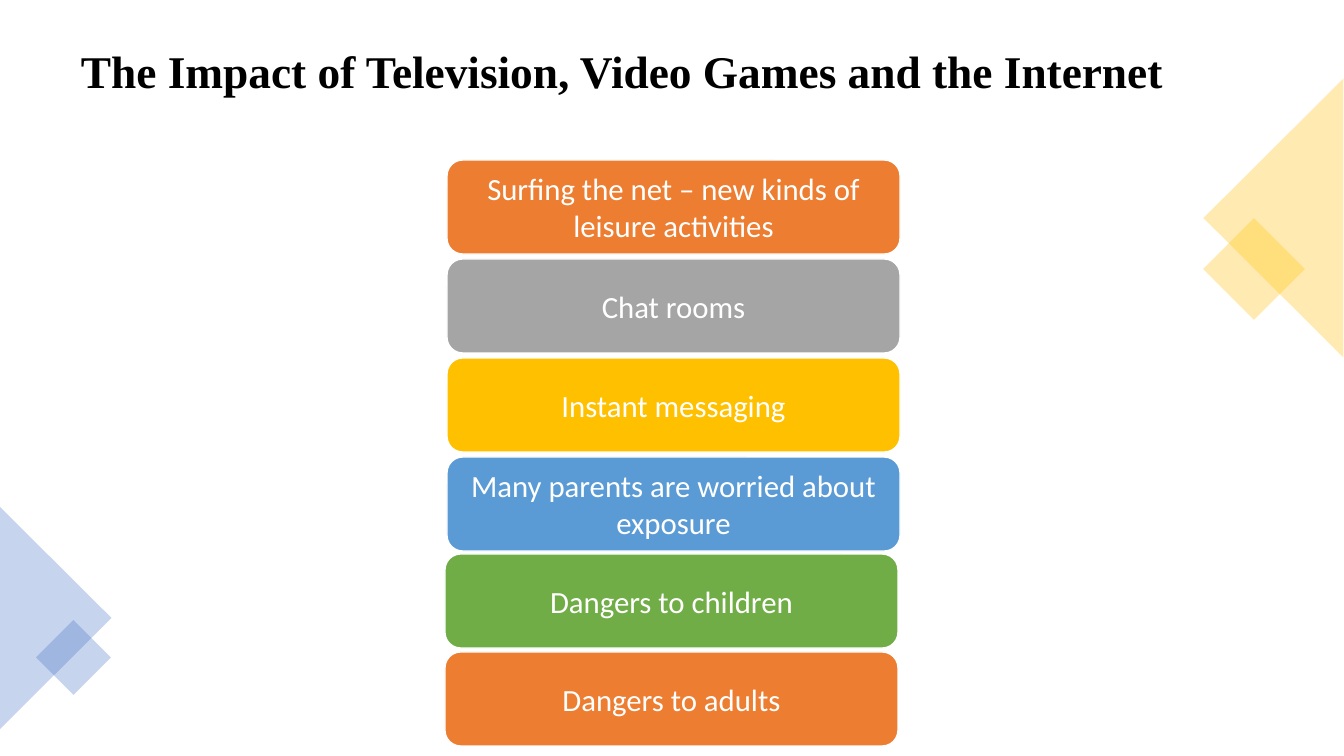
from lxml.etree import SubElement
from pptx import Presentation
from pptx.dml.color import RGBColor
from pptx.enum.shapes import MSO_SHAPE
from pptx.enum.text import MSO_ANCHOR, MSO_AUTO_SIZE, PP_ALIGN
from pptx.oxml.ns import qn
from pptx.util import Pt

EMU_PER_PX = 914400 / 100.8
COLORS = {
    "black": "000000",
    "white": "FFFFFF",
    "orange": "ED7D31",
    "gray": "A5A5A5",
    "gold": "FFC000",
    "sky": "5B9BD5",
    "green": "70AD47",
    "blue": "4472C4",
}
CARD_WIDTH, CARD_HEIGHT = 453, 94

# Each stack: left, top, distance between tops, cards
CARD_STACKS = [
    (447, 160, 99, [
        ("Surfing the net – new kinds of leisure activities", "orange"),
        ("Chat rooms", "gray"),
        ("Instant messaging", "gold"),
        ("Many parents are worried about exposure", "sky"),
    ]),
    (445, 554, 98, [
        ("Dangers to children", "green"),
        ("Dangers to adults", "orange"),
    ]),
]

# Corner decorations: preset, left, top, width, height, rotation, color
DECORATIONS = [
    (MSO_SHAPE.RECTANGLE, 1218, 233, 72, 72, 45, "gold"),
    (MSO_SHAPE.ISOSCELES_TRIANGLE, 1134, 148, 279, 140, 270, "gold"),
    (MSO_SHAPE.ISOSCELES_TRIANGLE, -56, 562, 223, 112, 90, "blue"),
    (MSO_SHAPE.RECTANGLE, 47, 631, 53, 53, 45, "blue"),
]


def px(length):
    return round(length * EMU_PER_PX)


def rgb(name):
    return RGBColor.from_string(COLORS[name])


def write_text(shape, text, *, size, font, color, bold=False,
               align=PP_ALIGN.LEFT, line_spacing=1.0, insets=(9, 5, 9, 5)):
    frame = shape.text_frame
    frame.word_wrap = True
    frame.auto_size = MSO_AUTO_SIZE.NONE
    frame.vertical_anchor = MSO_ANCHOR.MIDDLE
    (frame.margin_left, frame.margin_top,
     frame.margin_right, frame.margin_bottom) = map(px, insets)
    paragraph = frame.paragraphs[0]
    paragraph.alignment = align
    paragraph.line_spacing = line_spacing
    run = paragraph.add_run()
    run.text = text
    run.font.size = Pt(size)
    run.font.name = font
    run.font.bold = bold
    run.font.color.rgb = rgb(color)


def add_filled_shape(slide, preset, left, top, width, height, color):
    shape = slide.shapes.add_shape(preset, px(left), px(top), px(width), px(height))
    shape.shadow.inherit = False
    shape.fill.solid()
    shape.fill.fore_color.rgb = rgb(color)
    shape.line.fill.background()
    return shape


def add_decoration(slide, preset, left, top, width, height, rotation, color):
    shape = add_filled_shape(slide, preset, left, top, width, height, color)
    shape.rotation = rotation
    fill_color = shape.fill._xPr.find(qn("a:solidFill"))[0]
    SubElement(fill_color, qn("a:alpha"), val="30000")


def add_card(slide, left, top, text, color):
    card = add_filled_shape(slide, MSO_SHAPE.ROUNDED_RECTANGLE,
                            left, top, CARD_WIDTH, CARD_HEIGHT, color)
    card.line.color.rgb = rgb("white")
    card.line.width = Pt(1)
    write_text(card, text, size=22, font="Calibri", color="white",
               align=PP_ALIGN.CENTER)


def set_title(slide, text):
    title = slide.shapes.title
    title.left, title.top, title.width, title.height = map(px, (71, 35, 1203, 125))
    # The deep bottom inset lifts the single line above the middle
    write_text(title, text, size=32.4, font="Times New Roman", color="black",
               bold=True, line_spacing=0.9, insets=(10, 5, 10, 52))


def main():
    presentation = Presentation()
    presentation.slide_width, presentation.slide_height = px(1344), px(756)
    slide = presentation.slides.add_slide(presentation.slide_layouts[5])

    # Title
    set_title(slide, "The Impact of Television, Video Games and the Internet")

    # Corner decorations
    for decoration in DECORATIONS:
        add_decoration(slide, *decoration)

    # Topic cards
    for left, top, pitch, cards in CARD_STACKS:
        for index, (text, color) in enumerate(cards):
            add_card(slide, left, top + index * pitch, text, color)

    presentation.save("out.pptx")


if __name__ == "__main__":
    main()
